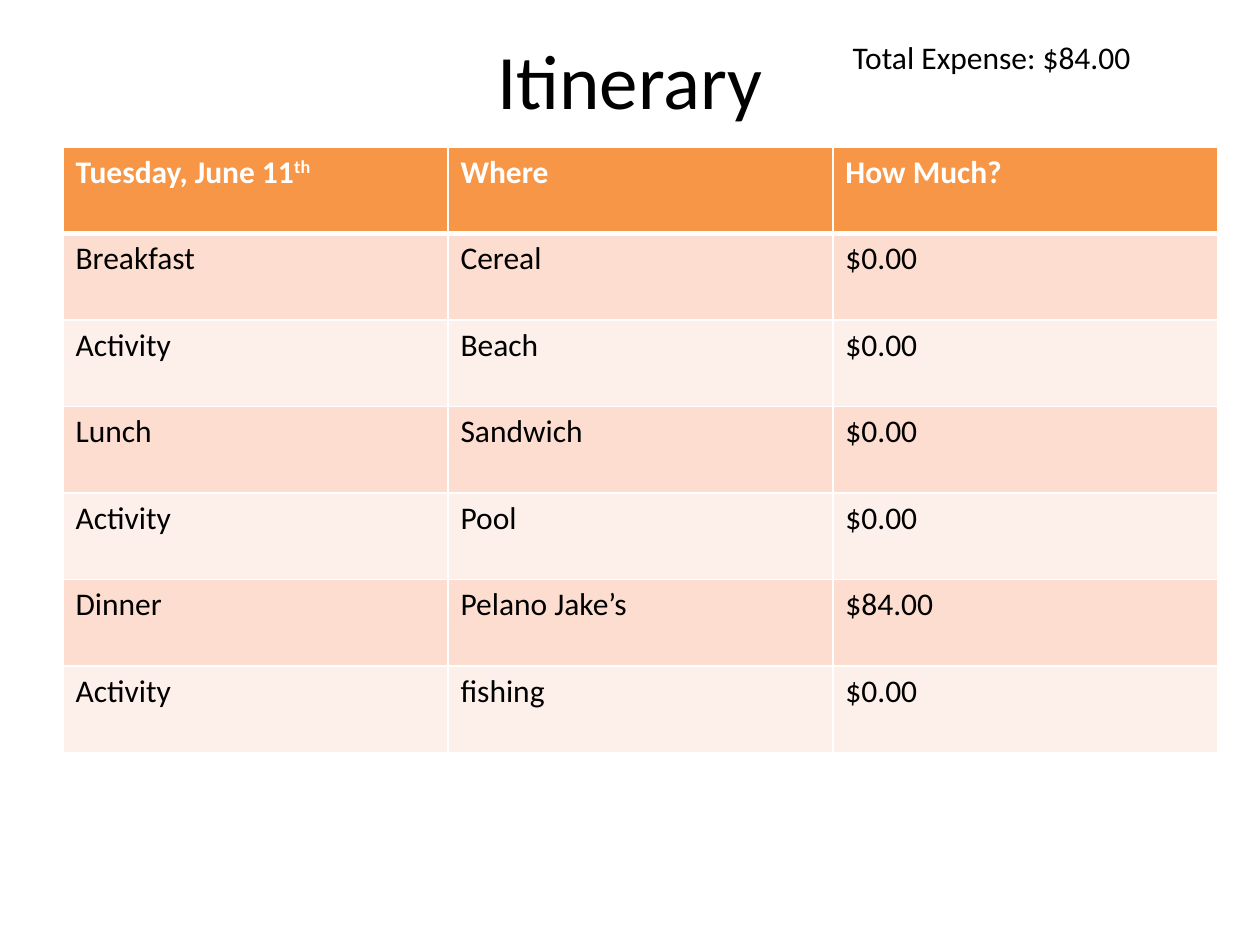
from lxml import etree
from pptx import Presentation
from pptx.dml.color import RGBColor
from pptx.enum import text
from pptx.oxml import ns
from pptx.util import Cm, Pt

COLOURS = {
    "ink": "000000",
    "white": "FFFFFF",
    "header": "F79646",
    "band_dark": "FCDDCF",
    "band_light": "FDEFE9",
}
HEADINGS = [("Tuesday, June 11", "th"), ("Where", ""), ("How Much?", "")]
ITINERARY = [
    ("Breakfast", "Cereal", "$0.00"),
    ("Activity", "Beach", "$0.00"),
    ("Lunch", "Sandwich", "$0.00"),
    ("Activity", "Pool", "$0.00"),
    ("Dinner", "Pelano Jake’s", "$84.00"),
    ("Activity", "fishing", "$0.00"),
]


def add_span(para, words, size=18, colour="ink", bold=False, raised=False):
    """Add one formatted run to a paragraph."""
    span = para.add_run()
    span.text = words
    span.font.name = "Calibri"
    span.font.size = Pt(size)
    span.font.bold = bold
    span.font.color.rgb = RGBColor.from_string(COLOURS[colour])
    if raised:
        span.font._element.set("baseline", "30000")


def add_label(page, box, words, align=text.PP_ALIGN.LEFT,
              anchor=text.MSO_ANCHOR.TOP, **style):
    """Place a wrapped text box in the given box."""
    frame = page.shapes.add_textbox(*box).text_frame
    frame.word_wrap = True
    frame.vertical_anchor = anchor
    frame.paragraphs[0].alignment = align
    add_span(frame.paragraphs[0], words, **style)


def set_borders(cell, bottom, top):
    """Draw white lines on the four sides of a cell."""
    properties = cell._tc.get_or_add_tcPr()
    for side, width in (("L", 1), ("R", 1), ("T", top), ("B", bottom)):
        line = etree.SubElement(properties, ns.qn(f"a:ln{side}"), w=str(Pt(width)))
        fill = etree.SubElement(line, ns.qn("a:solidFill"))
        etree.SubElement(fill, ns.qn("a:srgbClr"), val=COLOURS["white"])


def format_cell(cell, fill, bottom=1, top=1):
    """Set the borders and the fill of a cell."""
    set_borders(cell, bottom, top)
    cell.fill.solid()
    cell.fill.fore_color.rgb = RGBColor.from_string(COLOURS[fill])


def add_header(page, box):
    """Place the title and the total at the top of the page."""
    left, top, width, height = box
    add_label(page, box, "Itinerary", align=text.PP_ALIGN.CENTER,
              anchor=text.MSO_ANCHOR.MIDDLE, size=44)
    total_box = (left + Cm(15.67), top + Cm(0.64), Cm(7.82), Cm(1.02))
    add_label(page, total_box, "Total Expense: $84.00")


def add_itinerary(page, box):
    """Place the day's plan as a banded table."""
    row_count, column_count = len(ITINERARY) + 1, len(HEADINGS)
    table = page.shapes.add_table(row_count, column_count, *box).table
    for column, (heading, suffix) in enumerate(HEADINGS):
        cell = table.cell(0, column)
        format_cell(cell, "header", bottom=3)
        para = cell.text_frame.paragraphs[0]
        add_span(para, heading, colour="white", bold=True)
        if suffix:
            add_span(para, suffix, colour="white", bold=True, raised=True)
    for row, entries in enumerate(ITINERARY, start=1):
        for column, words in enumerate(entries):
            cell = table.cell(row, column)
            format_cell(cell, "band_dark" if row % 2 else "band_light",
                        top=3 if row == 1 else 1)
            add_span(cell.text_frame.paragraphs[0], words)


def main():
    """Build the itinerary slide and save it."""
    deck = Presentation()
    deck.slide_width, deck.slide_height = Cm(25.4), Cm(19.05)
    page = deck.slides.add_slide(deck.slide_layouts[6])
    add_header(page, (Cm(1.27), Cm(0), Cm(22.86), Cm(3.18)))
    add_itinerary(page, (Cm(1.27), Cm(2.96), Cm(23.28), Cm(12.22)))
    deck.save("out.pptx")


if __name__ == "__main__":
    main()
